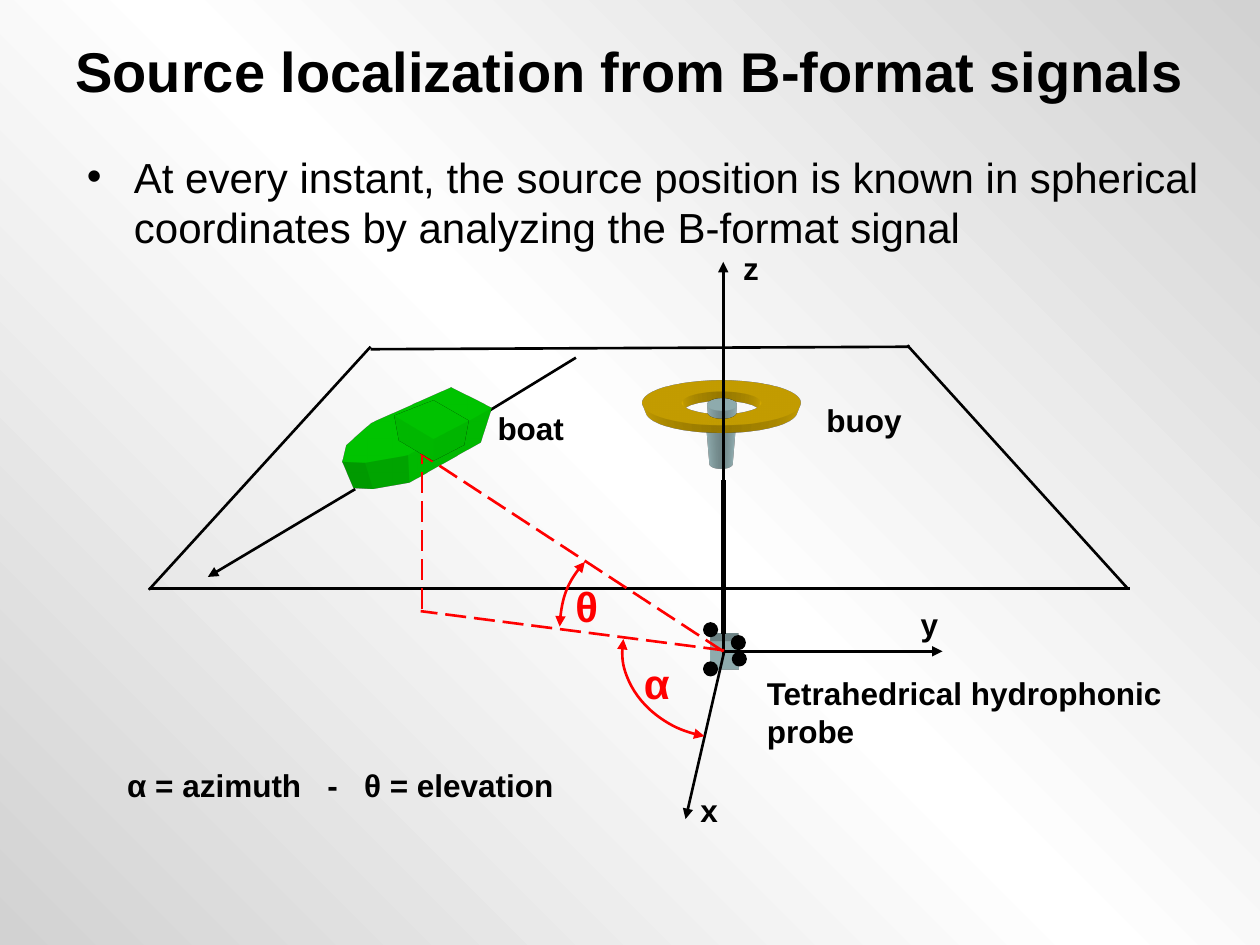
"""Builds the slide on locating a sound source from B-format signals."""
from copy import deepcopy

from lxml.etree import SubElement
from pptx import Presentation
from pptx.dml.color import RGBColor
from pptx.enum.dml import MSO_LINE
from pptx.enum.shapes import MSO_CONNECTOR, MSO_SHAPE
from pptx.enum.text import MSO_ANCHOR as ANCHOR, MSO_AUTO_SIZE as AUTO, PP_ALIGN as ALIGN
from pptx.oxml.ns import qn
from pptx.util import Cm, Pt

BLACK = RGBColor(0x00, 0x00, 0x00)
WHITE = RGBColor(0xFF, 0xFF, 0xFF)
GREY = RGBColor(0xD2, 0xD2, 0xD2)
RED = RGBColor(0xFF, 0x00, 0x00)
GREEN = RGBColor(0x00, 0xFF, 0x00)
GOLD = RGBColor(0xFF, 0xCC, 0x00)
STEEL = RGBColor(0xBB, 0xE0, 0xE3)


class Diagram:
    def __init__(self, slide, font="Arial", width=1.5):
        self.s, self.font, self.width = slide, font, width

    def background(self, edge, middle):
        fill = self.s.background.fill
        fill.gradient()
        fill.gradient_angle = 45
        first = self.s.element.find(".//" + qn("a:gs"))
        first.addnext(deepcopy(first))
        for stop, pos, color in zip(fill.gradient_stops, (0, 0.5, 1), (edge, middle, edge)):
            stop.position = pos
            stop.color.rgb = color

    def text(self, text, x, y, w, h, size=18, color=BLACK, bold=True,
             align=ALIGN.LEFT, anchor=ANCHOR.TOP, before=0.5, bullet=False):
        tf = self.s.shapes.add_textbox(Cm(x), Cm(y), Cm(w), Cm(h)).text_frame
        tf.word_wrap, tf.auto_size, tf.vertical_anchor = True, AUTO.NONE, anchor
        tf.text = text
        p = tf.paragraphs[0]
        p.alignment = align
        p.space_before = Pt(size * before)
        f = p.runs[0].font
        f.name, f.size, f.bold, f.color.rgb = self.font, Pt(size), bold, color
        if bullet:
            pPr = p._p.get_or_add_pPr()
            pPr.set("marL", str(Cm(0.95)))
            pPr.set("indent", str(-Cm(0.95)))
            SubElement(pPr, qn("a:buFont"), typeface=self.font)
            SubElement(pPr, qn("a:buChar"), char="•")

    def stroke(self, line, color, width=None, dashed=False, ends=()):
        line.color.rgb = color
        line.width = Pt(width or self.width)
        if dashed:
            line.dash_style = MSO_LINE.LONG_DASH
        for end in ends:
            SubElement(line._get_or_add_ln(), qn("a:" + end), type="triangle")

    def line(self, x1, y1, x2, y2, color=BLACK, width=None, dashed=False, arrow=False):
        c = self.s.shapes.add_connector(MSO_CONNECTOR.STRAIGHT, Cm(x1), Cm(y1), Cm(x2), Cm(y2))
        self.stroke(c.line, color, width, dashed, ("tailEnd",) if arrow else ())
        SubElement(c._element.spPr, qn("a:effectLst"))

    def paint(self, sp, color, outlined=False):
        sp.shadow.inherit = False
        sp.fill.solid()
        sp.fill.fore_color.rgb = color
        if outlined:
            self.stroke(sp.line, color)
        else:
            sp.line.fill.background()

    def extrude(self, sp, color, depth, side="Bottom"):
        spPr = sp._element.spPr
        scene = SubElement(spPr, qn("a:scene3d"))
        SubElement(scene, qn("a:camera"), prst="legacyPerspective" + side)
        SubElement(scene, qn("a:lightRig"), rig="legacyFlat3", dir="b")
        solid = SubElement(spPr, qn("a:sp3d"), extrusionH=str(Cm(depth)), prstMaterial="legacyMatte")
        SubElement(SubElement(solid, qn("a:extrusionClr")), qn("a:srgbClr"), val=str(color))

    def shape(self, kind, x, y, w, h, color, outlined=False, depth=0, side="Bottom"):
        sp = self.s.shapes.add_shape(kind, Cm(x), Cm(y), Cm(w), Cm(h))
        self.paint(sp, color, outlined)
        if depth:
            self.extrude(sp, color, depth, side)

    def outline(self, points):
        emu = [(Cm(x), Cm(y)) for x, y in points]
        fb = self.s.shapes.build_freeform(*emu[0])
        fb.add_line_segments(emu[1:])
        return fb.convert_to_shape()

    def polygon(self, points, color, depth):
        sp = self.outline(points)
        self.paint(sp, color)
        self.extrude(sp, color, depth)

    def curves(self, x, y, w, h, contours, closed=True):
        sp = self.outline([(x, y), (x + w, y), (x + w, y + h), (x, y + h)])
        trace = sp._element.find(".//" + qn("a:pathLst"))[0]
        for child in list(trace):
            trace.remove(child)
        for (px, py), (rx, ry), arcs in contours:
            move = SubElement(trace, qn("a:moveTo"))
            SubElement(move, qn("a:pt"), x=str(Cm(px)), y=str(Cm(py)))
            for start, swing in arcs:
                SubElement(trace, qn("a:arcTo"), wR=str(Cm(rx)), hR=str(Cm(ry)),
                           stAng=str(round(start * 60000)), swAng=str(round(swing * 60000)))
            if closed:
                SubElement(trace, qn("a:close"))
        return sp

    def ring(self, x, y, w, h, color, depth):
        outer = [(a % 360, 90) for a in range(180, 540, 90)]
        inner = [(a % 360, -90) for a in range(540, 180, -90)]
        sp = self.curves(x, y, w, h, [((0, h / 2), (w / 2, h / 2), outer),
                                      ((w / 4, h / 2), (w / 4, h / 4), inner)])
        self.paint(sp, color)
        self.extrude(sp, color, depth)

    def arc(self, x, y, w, h, rotation, begin, radii, start, color):
        sp = self.curves(x, y, w, h, [(begin, radii, [(start, 270 - start)])], closed=False)
        sp.rotation = rotation
        sp.shadow.inherit = False
        sp.fill.background()
        self.stroke(sp.line, color, ends=("headEnd", "tailEnd"))


def main():
    prs = Presentation()
    prs.slide_width, prs.slide_height = Cm(25.4), Cm(19.05)
    d = Diagram(prs.slides.add_slide(prs.slide_layouts[6]))
    d.background(GREY, WHITE)
    d.text("Source localization from B-format signals", 0, 0.13, 25.4, 2.57, size=32,
           align=ALIGN.CENTER, anchor=ANCHOR.MIDDLE, before=0)
    d.text("At every instant, the source position is known in spherical coordinates "
           "by analyzing the B-format signal", 1.5, 2.92, 23.22, 15.19, size=24,
           bold=False, before=0.2, bullet=True)
    d.text("α = azimuth   -   θ = elevation", 1.85, 15.32, 10.03, 1.02, align=ALIGN.CENTER)

    for edge in ((3, 11.86, 22.78, 11.86), (3, 11.89, 7.47, 6.99),
                 (7.47, 7.04, 18.34, 6.99), (22.73, 11.86, 18.29, 6.96)):
        d.line(*edge)

    d.shape(MSO_SHAPE.OVAL, 14.25, 8.43, 0.58, 0.25, STEEL, depth=7)
    d.shape(MSO_SHAPE.RECTANGLE, 14.33, 12.93, 0.56, 0.56, STEEL, depth=1.2, side="Top")
    d.line(14.58, 9.68, 14.58, 12.78, width=3)
    d.ring(12.95, 7.67, 3.18, 0.9, GOLD, depth=1.2)
    d.shape(MSO_SHAPE.OVAL, 14.27, 8.03, 0.58, 0.25, STEEL, depth=1.2)
    for x, y in ((14.2, 12.57), (14.76, 12.83), (14.2, 13.36), (14.78, 13.16)):
        d.shape(MSO_SHAPE.OVAL, x, y, 0.25, 0.25, BLACK, outlined=True)

    for axis in ((14.6, 13.13, 19, 13.13), (14.6, 13.13, 13.82, 16.51),
                 (14.58, 13.21, 14.58, 5.28)):
        d.line(*axis, arrow=True)
    for name, x, y in (("x", 13.87, 15.82), ("y", 18.31, 12.07), ("z", 14.73, 4.9)):
        d.text(name, x, y, 0.97, 1.02)

    d.line(7.16, 9.86, 4.19, 11.63, arrow=True)
    d.line(9.73, 8.36, 11.61, 7.21)
    d.line(14.6, 13.11, 8.48, 12.32, RED, dashed=True)
    d.arc(12.57, 12.88, 1.63, 1.96, 280.4, (0, 1.96), (1.63, 1.96), 180, RED)
    d.arc(11.89, 11.3, 1.27, 3.28, 313.8, (0, 0.53), (2.36, 3.28), 244.8, RED)
    d.text("buoy", 16.41, 7.95, 2.29, 1.02)
    d.text("Tetrahedrical hydrophonic probe", 15.21, 13.46, 8.66, 1.78)
    d.text("boat", 9.78, 8.13, 2.29, 1.02)
    d.text("α", 12.73, 13.13, 1.12, 1.27, size=24, color=RED)
    d.text("θ", 11.35, 11.58, 1.12, 1.27, size=24, color=RED)

    d.polygon([(9.91, 8.23), (8.23, 9.17), (7.37, 9.32), (6.91, 9.3), (6.99, 8.97),
               (7.49, 8.53), (9.09, 7.82)], GREEN, depth=4.5)
    d.line(14.58, 13.13, 8.48, 9.14, RED, dashed=True)
    d.line(8.51, 12.27, 8.51, 9.14, RED, dashed=True)
    d.polygon([(7.95, 8.38), (8.74, 8.84), (9.45, 8.48), (8.74, 8.08)], GREEN, depth=3.6)
    prs.save("out.pptx")


if __name__ == "__main__":
    main()
